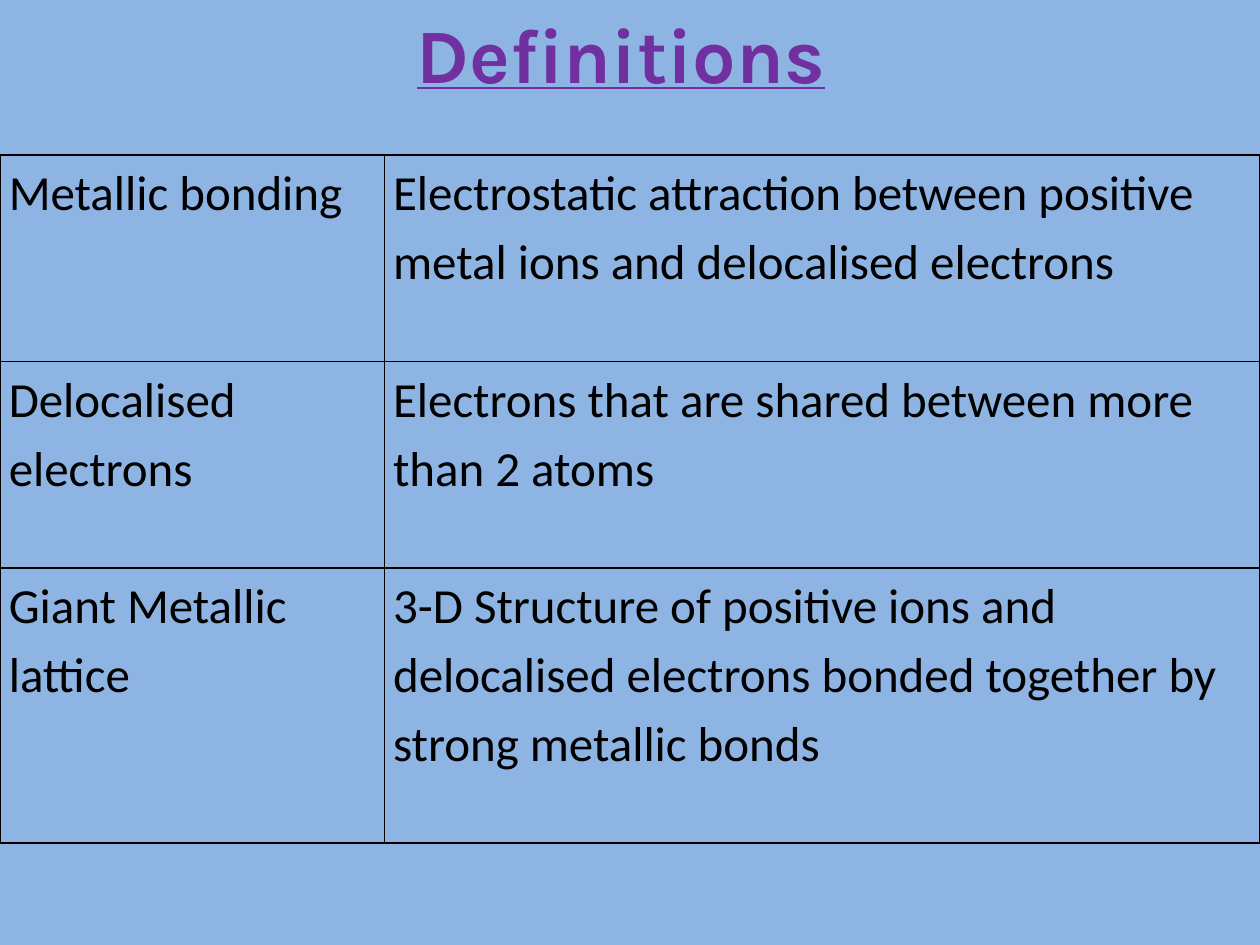
from pptx import Presentation
from pptx.dml.color import RGBColor
from pptx.enum.text import MSO_ANCHOR, PP_ALIGN
from pptx.oxml import parse_xml
from pptx.oxml.ns import nsdecls
from pptx.util import Inches, Pt

CENTER, LEFT = PP_ALIGN.CENTER, PP_ALIGN.LEFT
MIDDLE, TOP = MSO_ANCHOR.MIDDLE, MSO_ANCHOR.TOP

SKY = RGBColor(0x8E, 0xB4, 0xE3)
PURPLE = RGBColor(0x70, 0x30, 0xA0)
BLACK = RGBColor(0, 0, 0)

DEFINITIONS = [
    ("Metallic bonding",
     "Electrostatic attraction between positive metal ions and delocalised electrons"),
    ("Delocalised electrons",
     "Electrons that are shared between more than 2 atoms"),
    ("Giant Metallic lattice",
     "3-D Structure of positive ions and delocalised electrons bonded together by "
     "strong metallic bonds"),
]
COLUMN_WIDTHS = (3.05, 6.95)
ROW_HEIGHTS = (1.64, 1.64, 2.18)


def write(frame, text, *, font, size, color, align=LEFT, spacing=1.0,
          bold=False, underline=False):
    paragraph = frame.paragraphs[0]
    paragraph.alignment = align
    paragraph.line_spacing = spacing
    run = paragraph.add_run()
    run.text = text
    run.font.name = font
    run.font.size = Pt(size)
    run.font.color.rgb = color
    run.font.bold = bold
    run.font.underline = underline


def add_borders(cell, color, width):
    """Draw all four sides of a cell; borders go before the fill in tcPr."""
    properties = cell._tc.get_or_add_tcPr()
    for position, side in enumerate(("lnL", "lnR", "lnT", "lnB")):
        properties.insert(position, parse_xml(
            f'<a:{side} {nsdecls("a")} w="{Pt(width)}"><a:solidFill>'
            f'<a:srgbClr val="{color}"/></a:solidFill></a:{side}>'))


class SlideBuilder:
    heading_font = "Karla"
    body_font = "Calibri"

    def __init__(self, slide):
        self.slide = slide

    def background(self, color):
        fill = self.slide.background.fill
        fill.solid()
        fill.fore_color.rgb = color

    def heading(self, text, left, top, width, height):
        box = self.slide.shapes.add_textbox(
            Inches(left), Inches(top), Inches(width), Inches(height))
        frame = box.text_frame
        frame.word_wrap = True
        frame.vertical_anchor = MIDDLE
        write(frame, text, font=self.heading_font, size=44, color=PURPLE,
              align=CENTER, bold=True, underline=True)

    def table(self, rows, left, top, widths, heights):
        table = self.slide.shapes.add_table(
            len(rows), len(widths), Inches(left), Inches(top),
            Inches(sum(widths)), Inches(sum(heights))).table
        table.first_row = table.horz_banding = False
        for column, width in zip(table.columns, widths):
            column.width = Inches(width)
        for row, height, texts in zip(table.rows, heights, rows):
            row.height = Inches(height)
            for cell, text in zip(row.cells, texts):
                self.fill_cell(cell, text)

    def fill_cell(self, cell, text):
        cell.fill.background()
        cell.margin_left = cell.margin_right = Inches(0.07)
        cell.margin_top = cell.margin_bottom = 0
        cell.vertical_anchor = TOP
        add_borders(cell, BLACK, 1)
        write(cell.text_frame, text, font=self.body_font, size=28,
              color=BLACK, spacing=1.15)


def main():
    deck = Presentation()
    deck.slide_width, deck.slide_height = Inches(10), Inches(7.5)
    builder = SlideBuilder(deck.slides.add_slide(deck.slide_layouts[6]))
    builder.background(SKY)
    builder.heading("Definitions", 0.43, 0, 9, 0.84)
    builder.table(DEFINITIONS, 0, 1.23, COLUMN_WIDTHS, ROW_HEIGHTS)
    deck.save("out.pptx")


if __name__ == "__main__":
    main()
